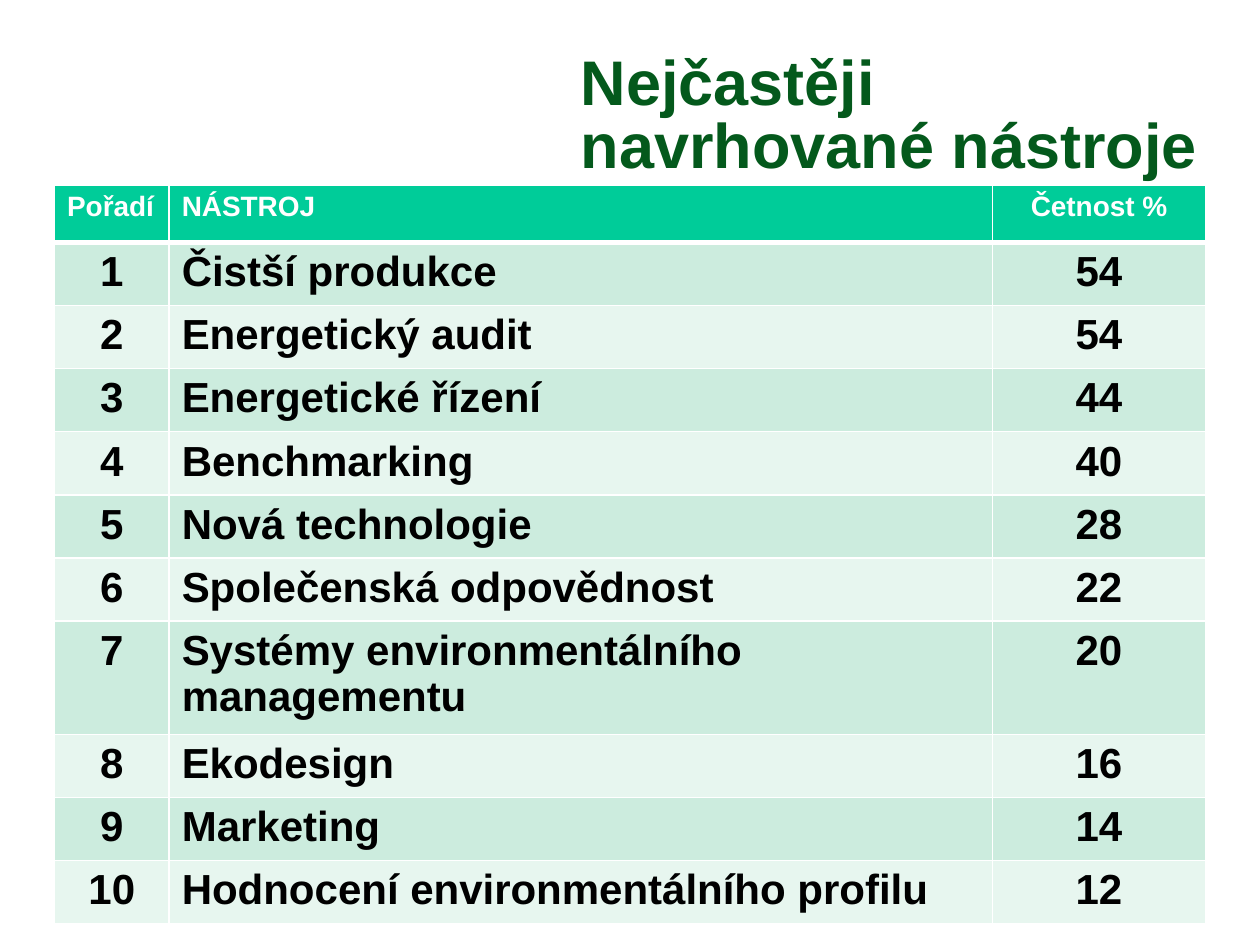
from lxml import etree
from pptx import Presentation
from pptx import util as u
from pptx.dml.color import RGBColor
from pptx.enum import text
from pptx.oxml.ns import qn

DARK_GREEN = RGBColor(0x04, 0x59, 0x1C)
HEADER_GREEN = RGBColor(0x00, 0xCC, 0x99)
BAND_DARK = RGBColor(0xCC, 0xEC, 0xDE)
BAND_LIGHT = RGBColor(0xE7, 0xF6, 0xEF)
WHITE = RGBColor(0xFF, 0xFF, 0xFF)
BLACK = RGBColor(0x00, 0x00, 0x00)

TITLE_FORMAT = {"name": "Arial", "size": u.Pt(36), "bold": True}
HEADER_FORMAT = {"name": "Arial", "size": u.Pt(16), "bold": True}
BODY_FORMAT = {"name": "Arial", "size": u.Pt(24), "bold": True}

HEADERS = ("Pořadí", "NÁSTROJ", "Četnost %")
TOOLS = (
    ("Čistší produkce", 54),
    ("Energetický audit", 54),
    ("Energetické řízení", 44),
    ("Benchmarking", 40),
    ("Nová technologie", 28),
    ("Společenská odpovědnost", 22),
    ("Systémy environmentálního managementu", 20),
    ("Ekodesign", 16),
    ("Marketing", 14),
    ("Hodnocení environmentálního profilu", 12),
)
COLUMN_WIDTHS = (u.Cm(2.31), u.Cm(16.6), u.Cm(4.29))
ROW_HEIGHT = u.Cm(1.16)


def format_font(font, values, color):
    for name, value in values.items():
        setattr(font, name, value)
    font.color.rgb = color


def add_title(slide, left, top, width, height):
    frame = slide.shapes.add_textbox(left, top, width, height).text_frame
    frame.word_wrap = True
    for side in ("left", "top", "right", "bottom"):
        setattr(frame, f"margin_{side}", 0)
    paragraph = frame.paragraphs[0]
    paragraph.text = "Nejčastěji navrhované nástroje"
    paragraph.line_spacing = 0.83
    format_font(paragraph.font, TITLE_FORMAT, DARK_GREEN)


def set_borders(cell, widths):
    """Draw white cell edges; widths maps an edge letter to points."""
    properties = cell._tc.get_or_add_tcPr()
    for position, (edge, width) in enumerate(widths.items()):
        line = etree.Element(qn(f"a:ln{edge}"), w=str(u.Pt(width)))
        fill = etree.SubElement(line, qn("a:solidFill"))
        etree.SubElement(fill, qn("a:srgbClr"), val=str(WHITE))
        properties.insert(position, line)


def fill_cell(cell, value, row, column):
    is_header = row == 0
    paragraph = cell.text_frame.paragraphs[0]
    paragraph.text = str(value)
    centred = column == 2 or (column == 0 and not is_header)
    paragraph.alignment = text.PP_ALIGN.CENTER if centred else text.PP_ALIGN.LEFT
    if is_header:
        format_font(paragraph.font, HEADER_FORMAT, WHITE)
        color = HEADER_GREEN
    else:
        format_font(paragraph.font, BODY_FORMAT, BLACK)
        color = BAND_DARK if row % 2 else BAND_LIGHT
    cell.fill.solid()
    cell.fill.fore_color.rgb = color
    set_borders(cell, {"L": 1, "R": 1, "T": 3 if row == 1 else 1,
                       "B": 3 if is_header else 1})


def add_tools_table(slide, left, top):
    rows = [HEADERS] + [(rank, *tool) for rank, tool in enumerate(TOOLS, 1)]
    table = slide.shapes.add_table(
        len(rows), len(HEADERS), left, top,
        sum(COLUMN_WIDTHS), ROW_HEIGHT * len(rows)).table
    for column, width in zip(table.columns, COLUMN_WIDTHS):
        column.width = width
    for row, values in enumerate(rows):
        for column, value in enumerate(values):
            fill_cell(table.cell(row, column), value, row, column)


def main():
    presentation = Presentation()
    presentation.slide_width = u.Cm(25.4)
    presentation.slide_height = u.Cm(19.05)
    slide = presentation.slides.add_slide(presentation.slide_layouts[6])
    add_title(slide, u.Cm(11.71), u.Cm(1.12), u.Cm(12.6), u.Cm(2.9))
    add_tools_table(slide, u.Cm(1.1), u.Cm(3.73))
    presentation.save("out.pptx")


if __name__ == "__main__":
    main()
